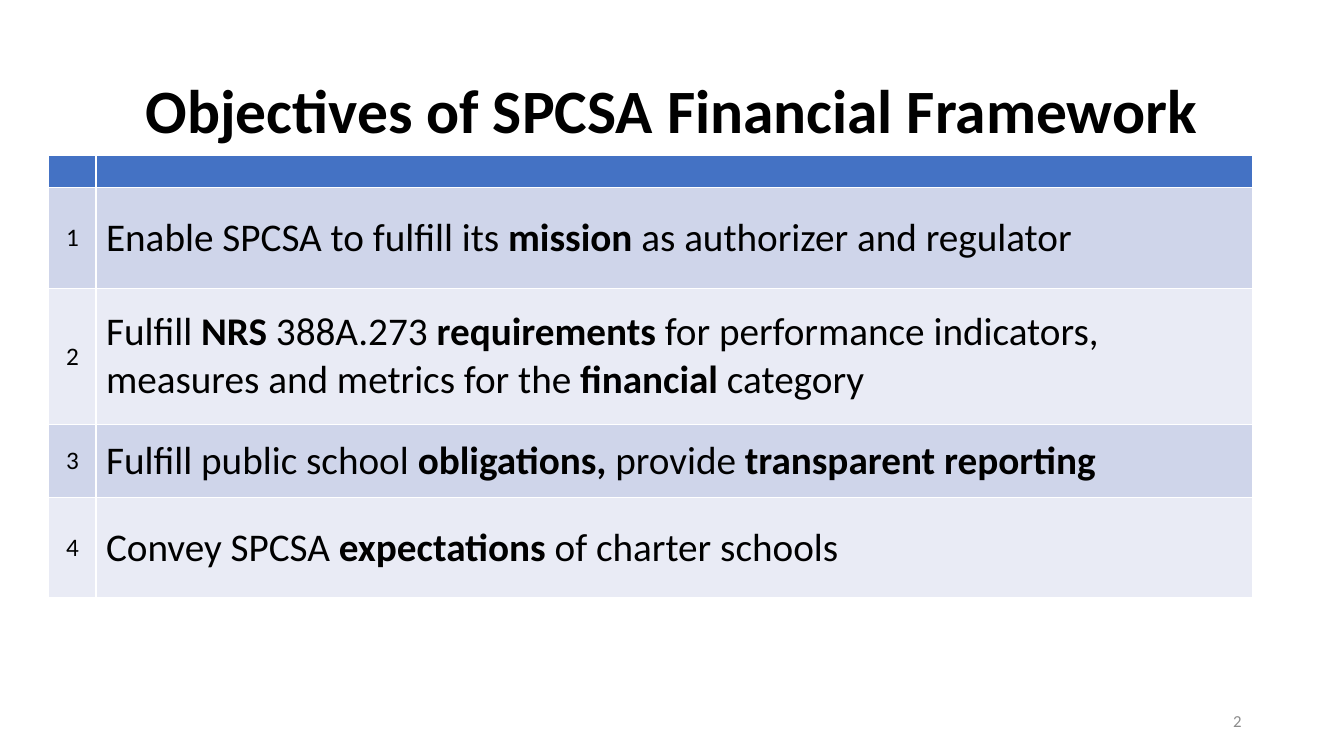
from pptx import Presentation
from pptx.dml.color import RGBColor
from pptx.enum.text import MSO_ANCHOR, PP_ALIGN
from pptx.util import Cm, Pt

BLACK = RGBColor(0x00, 0x00, 0x00)
GRAY = RGBColor(0x8C, 0x8C, 0x8C)
HEADER_BLUE = RGBColor(0x44, 0x72, 0xC4)
BANDS = [RGBColor(0xCF, 0xD5, 0xEA), RGBColor(0xE9, 0xEB, 0xF5)]
FONT = "Calibri"

# Asterisks enclose the bold words
OBJECTIVES = [
    "Enable SPCSA to fulfill its *mission *as authorizer and regulator",
    "Fulfill *NRS *388A.273* requirements *for performance indicators, "
    "measures and metrics for the *financial *category",
    "Fulfill public school *obligations, *provide *transparent reporting*",
    "Convey SPCSA *expectations* of charter schools",
]
HEADER_HEIGHT = 0.81
OBJECTIVE_HEIGHTS = [2.54, 3.43, 1.83, 2.54]
NUMBER_WIDTH = 1.19


def write(text_frame, text, size, align, color=BLACK, bold=False):
    """Write one paragraph; text between asterisks switches bold."""
    text_frame.vertical_anchor = MSO_ANCHOR.MIDDLE
    paragraph = text_frame.paragraphs[0]
    paragraph.alignment = align
    for index, part in enumerate(text.split("*")):
        if part:
            run = paragraph.add_run()
            run.text = part
            run.font.name = FONT
            run.font.size = Pt(size)
            run.font.color.rgb = color
            run.font.bold = bold or index % 2 == 1
    return paragraph


def fill_cell(cell, color):
    cell.fill.solid()
    cell.fill.fore_color.rgb = color
    cell.vertical_anchor = MSO_ANCHOR.MIDDLE


def place_title(slide, left, top, width, height):
    title = slide.shapes.title
    title.left, title.top = Cm(left), Cm(top)
    title.width, title.height = Cm(width), Cm(height)
    paragraph = write(title.text_frame, "Objectives of SPCSA Financial Framework",
                      44, PP_ALIGN.CENTER, bold=True)
    paragraph.line_spacing = 0.9


def place_objectives(slide, left, top, width):
    heights = [HEADER_HEIGHT] + OBJECTIVE_HEIGHTS
    table = slide.shapes.add_table(len(heights), 2, Cm(left), Cm(top),
                                   Cm(width), Cm(sum(heights))).table
    table.columns[0].width = Cm(NUMBER_WIDTH)
    table.columns[1].width = Cm(width - NUMBER_WIDTH)
    for row, height in zip(table.rows, heights):
        row.height = Cm(height)

    # Thin empty header
    for cell in table.rows[0].cells:
        fill_cell(cell, HEADER_BLUE)
        cell.margin_top = cell.margin_bottom = 0

    # Numbered objectives in alternating bands
    for number, objective in enumerate(OBJECTIVES, start=1):
        number_cell, text_cell = table.rows[number].cells
        for cell in (number_cell, text_cell):
            fill_cell(cell, BANDS[(number - 1) % 2])
        write(number_cell.text_frame, str(number), 18, PP_ALIGN.CENTER)
        write(text_cell.text_frame, objective, 28, PP_ALIGN.LEFT)


def place_slide_number(slide, left, top, width, height):
    box = slide.shapes.add_textbox(Cm(left), Cm(top), Cm(width), Cm(height))
    box.text_frame.word_wrap = True
    write(box.text_frame, "2", 12, PP_ALIGN.RIGHT, color=GRAY)


def main():
    presentation = Presentation()
    presentation.slide_width, presentation.slide_height = Cm(33.87), Cm(19.05)
    slide = presentation.slides.add_slide(presentation.slide_layouts[5])
    place_title(slide, 2.33, 1.01, 29.21, 3.68)
    place_objectives(slide, 1.23, 3.92, 30.33)
    place_slide_number(slide, 23.92, 17.66, 7.62, 1.01)
    presentation.save("out.pptx")


if __name__ == "__main__":
    main()
